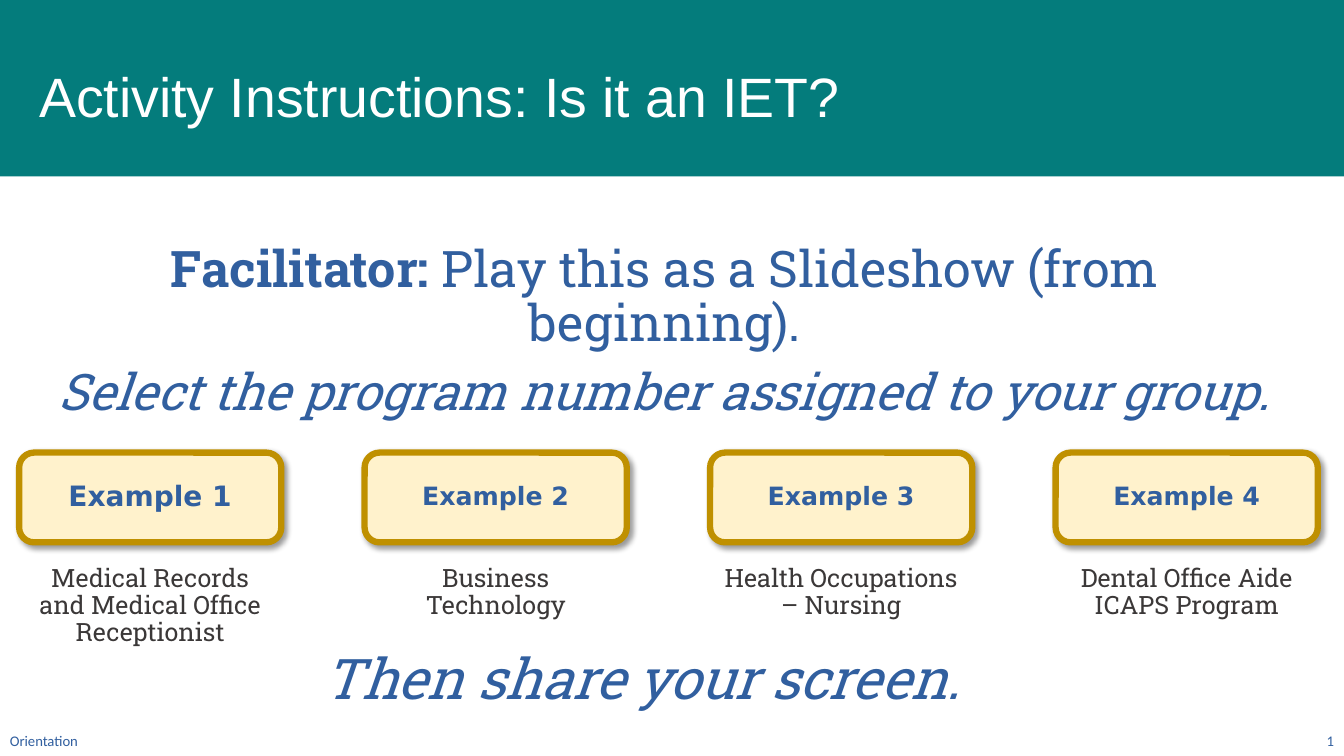
from dataclasses import dataclass

from lxml import etree
from pptx import Presentation
from pptx import util as u
from pptx.dml.color import RGBColor
from pptx.enum import shapes, text
from pptx.oxml import parse_xml
from pptx.oxml.ns import nsdecls

AL, ANC = text.PP_ALIGN, text.MSO_ANCHOR


@dataclass(frozen=True)
class Theme:
    """Colours, fonts and type sizes of the slide."""
    teal: str = "047C7C"
    blue: str = "315F9F"
    white: str = "FFFFFF"
    cream: str = "FFF2CC"
    gold: str = "BF9000"
    ink: str = "3B3838"
    title_font: str = "Arial"
    body_font: str = "Roboto Slab"
    button_font: str = "DejaVu Sans"
    footer_font: str = "Calibri"
    title: float = 39.6
    lead: float = 36
    closing: float = 40
    first_button: float = 20
    label: float = 18
    footer: float = 10.5


T = Theme()
W, H = 13.33, 7.5
EXAMPLES = [
    "Medical Records and Medical Office Receptionist",
    "Business Technology",
    "Health Occupations – Nursing",
    "Dental Office Aide ICAPS Program",
]


def rgb(code):
    """Turn a hex code into a colour."""
    return RGBColor.from_string(code)


def write(sp, paragraphs, font, size, color, align=AL.CENTER, anchor=ANC.TOP, line=0.9, before=10):
    """Fill a shape with paragraphs, each a list of (words, bold, italic) runs."""
    tf = sp.text_frame
    tf.word_wrap, tf.vertical_anchor = True, anchor
    for i, runs in enumerate(paragraphs):
        p = tf.paragraphs[0] if i == 0 else tf.add_paragraph()
        p.alignment, p.line_spacing, p.space_before = align, line, u.Pt(before)
        for words, bold, italic in runs:
            r = p.add_run()
            r.text = words
            r.font.name, r.font.size = font, u.Pt(size)
            r.font.bold, r.font.italic = bold, italic
            r.font.color.rgb = rgb(color)


def textbox(s, box, paragraphs, font, size, color, **style):
    """Place a text box at (left, top, width, height) in inches."""
    sp = s.shapes.add_textbox(*map(u.Inches, box))
    write(sp, paragraphs, font, size, color, **style)


def panel(s, kind, box, fill):
    """Place a plain filled shape without line or shadow."""
    sp = s.shapes.add_shape(kind, *map(u.Inches, box))
    sp.shadow.inherit = False
    sp.fill.solid()
    sp.fill.fore_color.rgb = rgb(fill)
    sp.line.fill.background()
    return sp


def drop_shadow(sp):
    """Give a shape a soft shadow to the lower right."""
    effects = sp.shadow._element.find("{*}effectLst")
    effects.append(parse_xml(
        f'<a:outerShdw {nsdecls("a")} blurRad="{u.Pt(4)}" dist="{u.Pt(3)}" dir="2700000" '
        'algn="tl" rotWithShape="0"><a:srgbClr val="000000"><a:alpha val="40000"/>'
        '</a:srgbClr></a:outerShdw>'))


def header(s, box, title):
    """Draw the title band with its title near the bottom."""
    x, y, w, h = box
    panel(s, shapes.MSO_SHAPE.RECTANGLE, box, T.teal)
    textbox(s, (x + 0.29, y + 0.6, 11.5, 0.73), [[(title, False, False)]], T.title_font,
            T.title, T.white, align=AL.LEFT, anchor=ANC.BOTTOM, before=0)


def instructions(s, box):
    """Write the facilitator's two instructions."""
    textbox(s, box, [
        [("Facilitator:", True, False),
         (" Play this as a Slideshow (from beginning).", False, False)],
        [("Select the program number assigned to your group.", False, True)],
    ], T.body_font, T.lead, T.blue)


def example(s, box, number, program):
    """Draw one example button with its program below."""
    x, y, w, h = box
    sp = panel(s, shapes.MSO_SHAPE.ROUNDED_RECTANGLE, (x, y, w, 0.89), T.cream)
    sp.line.color.rgb = rgb(T.gold)
    sp.line.width = u.Pt(4.5)
    drop_shadow(sp)
    write(sp, [[(f"Example {number}", True, False)]], T.button_font,
          T.first_button if number == 1 else T.label, T.blue, anchor=ANC.MIDDLE)
    textbox(s, (x, y + 1.07, w, h - 1.07), [[(program, False, False)]],
            T.body_font, T.label, T.ink)


def example_row(s, box, programs):
    """Spread the examples evenly across the row."""
    x, y, w, h = box
    width = 2.6
    step = (w - width) / (len(programs) - 1)
    for i, program in enumerate(programs):
        example(s, (x + i * step, y, width, h), i + 1, program)


def footer(s, box, name, number):
    """Write the section name at left and the slide number at right."""
    x, y, w, h = box
    for left, width, words, align in ((x, 4.5, name, AL.LEFT), (x + w - 3, 3, number, AL.RIGHT)):
        textbox(s, (left, y, width, h), [[(words, False, False)]], T.footer_font, T.footer,
                T.blue, align=align, anchor=ANC.BOTTOM, line=1, before=0)


def main():
    """Build the slide and save it."""
    prs = Presentation()
    prs.slide_width, prs.slide_height = u.Inches(W), u.Inches(H)
    s = prs.slides.add_slide(prs.slide_layouts[6])
    header(s, (0, 0, W, 1.75), "Activity Instructions: Is it an IET?")
    footer(s, (0, 7.17, W, 0.31), "Orientation", "1")
    instructions(s, (0.29, 2.37, 12.61, 1.82))
    example_row(s, (0.19, 4.49, 12.88, 2.05), EXAMPLES)
    textbox(s, (1.94, 6.41, 8.86, 0.9), [[("Then share your screen.", False, True)]],
            T.body_font, T.closing, T.blue)
    prs.save("out.pptx")


if __name__ == "__main__":
    main()
